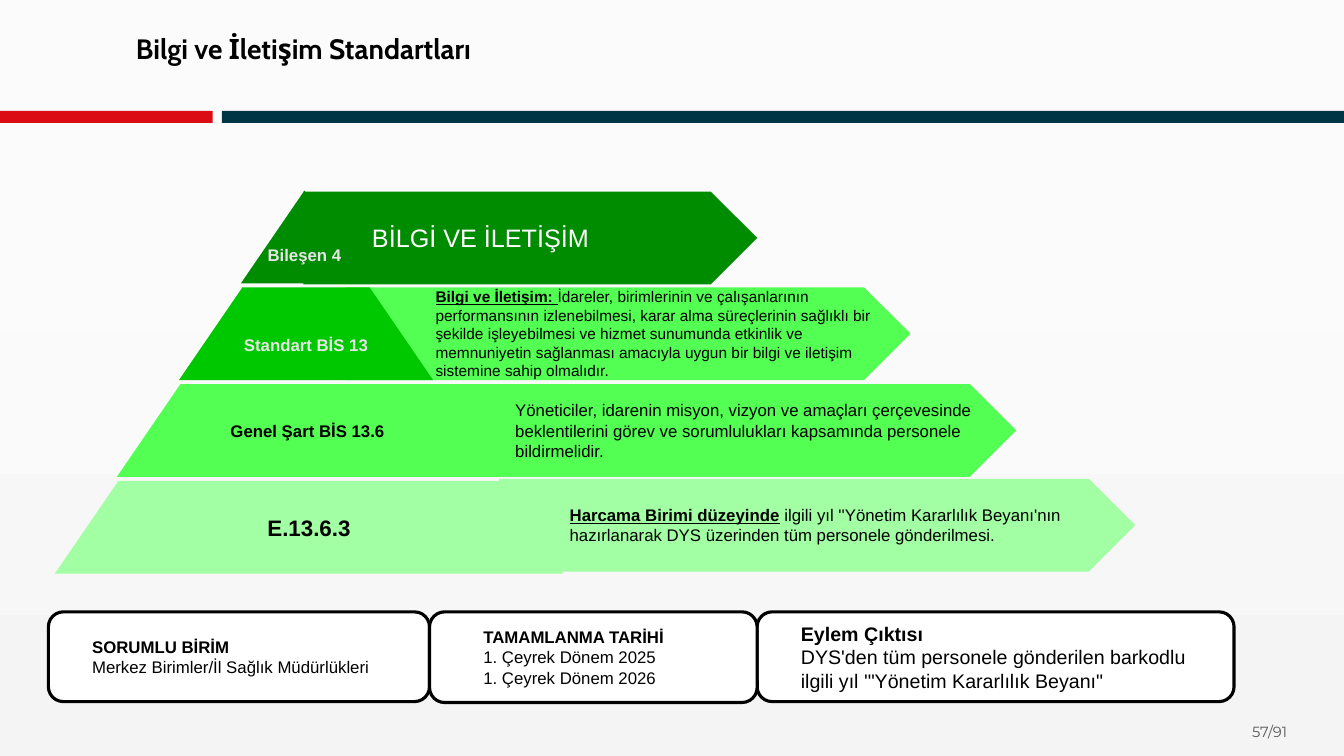
from copy import deepcopy
from dataclasses import dataclass

from pptx import Presentation
from pptx.dml.color import RGBColor
from pptx.enum.shapes import MSO_SHAPE
from pptx.enum.text import MSO_ANCHOR, PP_ALIGN
from pptx.oxml.ns import qn
from pptx.util import Inches, Pt


@dataclass(frozen=True)
class Theme:
    background: tuple = ((0, "FBFBFB"), (0.44, "FAFAFA"), (1, "F4F4F4"))
    red: str = "DC0C15"
    navy: str = "003546"
    dark_green: str = "008C00"
    green: str = "00C800"
    light_green: str = "53FF53"
    pale_green: str = "A3FFA3"
    black: str = "000000"
    white: str = "FFFFFF"
    pale_gray: str = "E7E6E6"
    gray: str = "595959"
    body_font: str = "Arial"
    title_font: str = "Cabin"
    number_font: str = "Montserrat"
    title_size: float = 20
    heading_size: float = 18
    action_size: float = 16
    output_size: float = 14
    body_size: float = 12
    small_size: float = 11
    number_size: float = 10.5


THEME = Theme()


@dataclass(frozen=True)
class Span:
    text: str
    bold: bool = False
    underline: bool = False


@dataclass(frozen=True)
class TextStyle:
    size: float = THEME.body_size
    color: str = THEME.black
    font: str = THEME.body_font
    align: PP_ALIGN = PP_ALIGN.LEFT
    anchor: MSO_ANCHOR = MSO_ANCHOR.MIDDLE
    insets: tuple = (0.1, 0.05, 0.1, 0.05)  # left, top, right, bottom
    line_spacing: float = 1.0


@dataclass(frozen=True)
class Level:
    label: str
    label_fill: str
    label_style: TextStyle
    arrow: tuple  # left, top, width
    arrow_fill: str
    spans: tuple
    arrow_style: TextStyle


@dataclass(frozen=True)
class Card:
    left: float
    width: float
    height: float
    lines: tuple
    style: TextStyle


def indented(indent: float, size: float = THEME.body_size, color: str = THEME.black) -> TextStyle:
    return TextStyle(size, color, insets=(0.1 + indent, 0.05, 0.1, 0.05))


def label_style(color: str, side: float, top: float = 0.03, size: float = THEME.body_size) -> TextStyle:
    return TextStyle(size, color, align=PP_ALIGN.CENTER, insets=(side, top, side, 0.03))


LEVELS = (
    Level("Bileşen 4", THEME.dark_green, label_style(THEME.pale_gray, 0.02, 0.38),
          (3.01, 1.9, 4.5), THEME.dark_green, (Span("BİLGİ VE İLETİŞİM"),),
          indented(0.58, THEME.heading_size, THEME.white)),
    Level("Standart BİS 13", THEME.green, label_style(THEME.pale_gray, 0.54, 0.25),
          (3.43, 2.85, 5.6), THEME.light_green,
          (Span("Bilgi ve İletişim: ", True, True),
           Span("İdareler, birimlerinin ve çalışanlarının performansının izlenebilmesi, karar alma "
                "süreçlerinin sağlıklı bir şekilde işleyebilmesi ve hizmet sunumunda etkinlik ve "
                "memnuniyetin sağlanması amacıyla uygun bir bilgi ve iletişim sistemine sahip olmalıdır.")),
          indented(0.79, THEME.small_size)),
    Level("Genel Şart BİS 13.6", THEME.light_green, label_style(THEME.black, 0.79),
          (4.22, 3.81, 5.86), THEME.light_green,
          (Span("Yöneticiler, idarenin misyon, vizyon ve amaçları çerçevesinde beklentilerini görev ve "
                "sorumlulukları kapsamında personele bildirmelidir."),),
          indented(0.79)),
    Level("E.13.6.3", THEME.pale_green, label_style(THEME.black, 1.05, size=THEME.action_size),
          (4.95, 4.75, 6.31), THEME.pale_green,
          (Span("Harcama Birimi düzeyinde", True, True),
           Span("\u00a0ilgili yıl ''Yönetim Kararlılık Beyanı'nın hazırlanarak DYS üzerinden tüm "
                "personele gönderilmesi.")),
          indented(0.6)),
)

CARDS = (
    Card(0.48, 3.78, 0.89, ("SORUMLU BİRİM", "Merkez Birimler/İl Sağlık Müdürlükleri"), indented(0.29)),
    Card(7.51, 4.73, 0.89,
         ("Eylem Çıktısı", "DYS'den tüm personele gönderilen barkodlu ilgili yıl '\"Yönetim Kararlılık Beyanı\""),
         indented(0.29, THEME.output_size)),
    Card(4.26, 3.25, 0.9, ("TAMAMLANMA TARİHİ", "1. Çeyrek Dönem 2025", "1. Çeyrek Dönem 2026"),
         indented(0.39)),
)


def write(box, paragraphs: list, style: TextStyle) -> None:
    frame = box.text_frame
    frame.word_wrap = True
    frame.vertical_anchor = style.anchor
    (frame.margin_left, frame.margin_top,
     frame.margin_right, frame.margin_bottom) = map(Inches, style.insets)
    for index, spans in enumerate(paragraphs):
        paragraph = frame.paragraphs[0] if index == 0 else frame.add_paragraph()
        paragraph.alignment = style.align
        paragraph.line_spacing = style.line_spacing
        for span in spans:
            run = paragraph.add_run()
            run.text = span.text
            run.font.name = style.font
            run.font.size = Pt(style.size)
            run.font.bold = span.bold
            run.font.underline = span.underline
            run.font.color.rgb = RGBColor.from_string(style.color)


def paint(shape, fill: str, line: str = "") -> None:
    shape.shadow.inherit = False
    shape.fill.solid()
    shape.fill.fore_color.rgb = RGBColor.from_string(fill)
    if line:
        shape.line.color.rgb = RGBColor.from_string(line)
        shape.line.width = Pt(2.25)
    else:
        shape.line.fill.background()


def add_preset(page, kind: MSO_SHAPE, place: tuple, fill: str, line: str = ""):
    shape = page.shapes.add_shape(kind, *map(Inches, place))
    paint(shape, fill, line)
    return shape


def add_text(page, place: tuple, span: Span, style: TextStyle) -> None:
    write(page.shapes.add_textbox(*map(Inches, place)), [[span]], style)


def add_pyramid_step(page, index: int, level: Level) -> None:
    """Each step is as wide at its top as the step above is at its base."""
    half, height = 0.63, 0.92
    center, top = 3.02 + 0.015 * index, 1.89 + 0.96 * index
    upper, lower, bottom = half * index, half * (index + 1), top + height
    corners = [(center - upper, top), (center + upper, top), (center + lower, bottom)]
    builder = page.shapes.build_freeform(Inches(center - lower), Inches(bottom))
    builder.add_line_segments([(Inches(x), Inches(y)) for x, y in corners], close=True)
    step = builder.convert_to_shape()
    paint(step, level.label_fill)
    write(step, [[Span(level.label, True)]], level.label_style)


def set_background(page) -> None:
    fill = page.background.fill
    fill.gradient()
    fill.gradient_angle = 270
    stop_list = next(page.element.iter(qn("a:gsLst")))
    stop_list.insert(1, deepcopy(stop_list[0]))
    for stop, (position, color) in zip(fill.gradient_stops, THEME.background):
        stop.position = position
        stop.color.rgb = RGBColor.from_string(color)


def main() -> None:
    deck = Presentation()
    deck.slide_width, deck.slide_height = Inches(13.33), Inches(7.5)
    page = deck.slides.add_slide(deck.slide_layouts[6])
    set_background(page)

    # Page number, header bars and title
    add_text(page, (12.32, 7.12, 0.9, 0.4), Span("57/91"),
             TextStyle(THEME.number_size, THEME.gray, THEME.number_font, anchor=MSO_ANCHOR.TOP))
    add_preset(page, MSO_SHAPE.RECTANGLE, (0, 1.1, 2.11, 0.12), THEME.red)
    add_preset(page, MSO_SHAPE.RECTANGLE, (2.2, 1.1, 11.13, 0.12), THEME.navy)
    add_text(page, (1.25, 0.3, 3.94, 0.47), Span("Bilgi ve İletişim Standartları", True),
             TextStyle(THEME.title_size, font=THEME.title_font, anchor=MSO_ANCHOR.TOP, line_spacing=0.9))

    # Arrows behind the pyramid
    for level in LEVELS:
        arrow = add_preset(page, MSO_SHAPE.PENTAGON, (*level.arrow, 0.92), level.arrow_fill)
        write(arrow, [level.spans], level.arrow_style)

    # Pyramid steps
    for index, level in enumerate(LEVELS):
        add_pyramid_step(page, index, level)

    # Cards along the bottom, each with a bold first line
    for card in CARDS:
        place = (card.left, 6.07, card.width, card.height)
        box = add_preset(page, MSO_SHAPE.ROUNDED_RECTANGLE, place, THEME.white, THEME.black)
        write(box, [[Span(line, row == 0)] for row, line in enumerate(card.lines)], card.style)

    deck.save("out.pptx")


if __name__ == "__main__":
    main()
